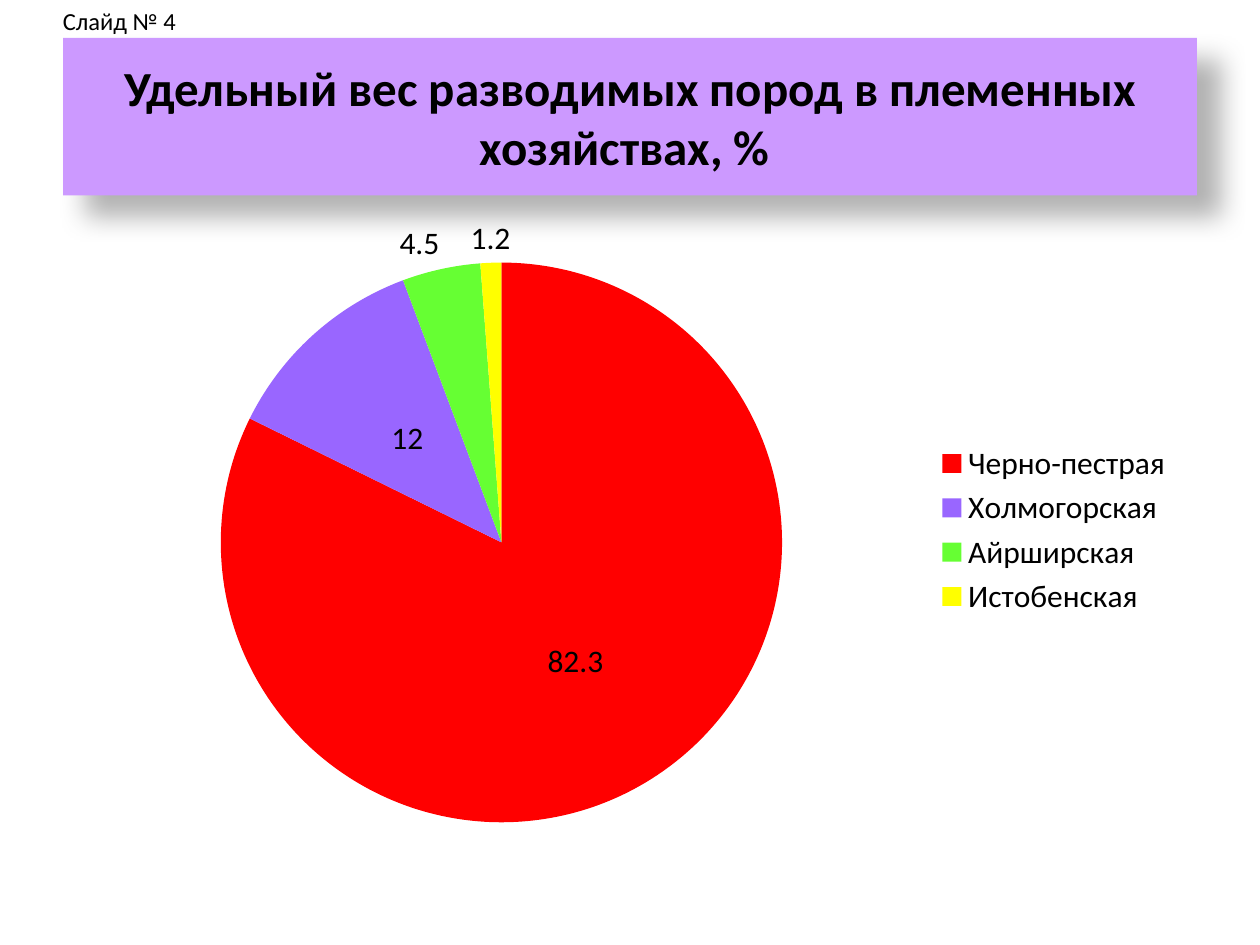
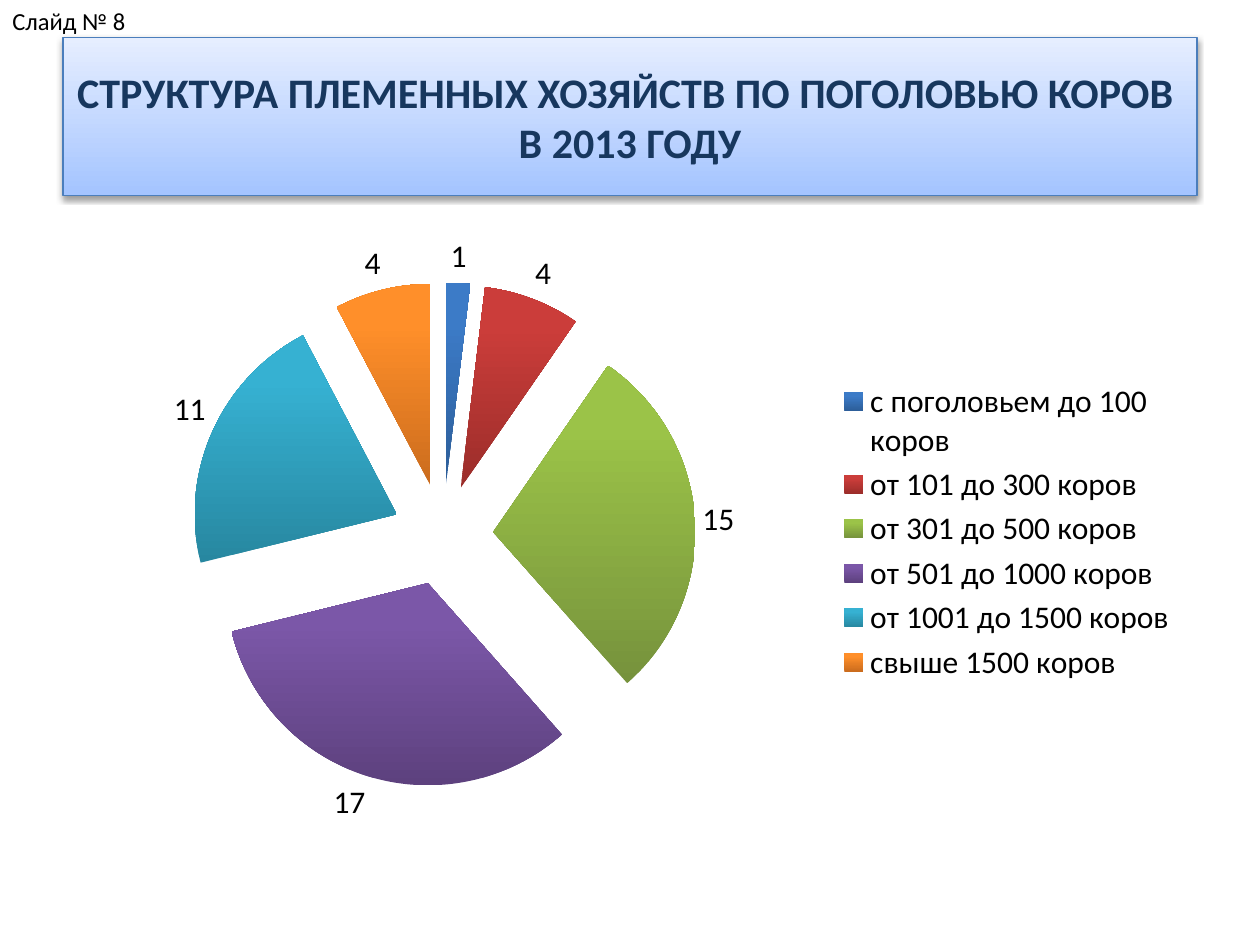
from pptx import Presentation
from pptx.chart.data import CategoryChartData
from pptx.dml.color import RGBColor
from pptx.enum.chart import XL_CHART_TYPE, XL_LABEL_POSITION, XL_LEGEND_POSITION
from pptx.enum.text import MSO_ANCHOR, MSO_AUTO_SIZE, PP_ALIGN
from pptx.oxml import parse_xml
from pptx.oxml.ns import nsdecls, qn
from pptx.util import Inches, Pt

FONT = "Calibri"
BLACK = RGBColor(0, 0, 0)
NAVY = RGBColor(0x17, 0x37, 0x5E)
SKY = RGBColor(0x8E, 0xB4, 0xE3)
EDGE = RGBColor(0x4B, 0x7E, 0xBC)
LILAC = RGBColor(0xCC, 0x99, 0xFF)
PALE = (RGBColor(0xA4, 0xC4, 0xFF), RGBColor(0xE6, 0xEE, 0xFF))
BREEDS = (
    ("Черно-пестрая ", 82.3, RGBColor(0xFF, 0, 0)),
    ("Холмогорская", 12, RGBColor(0x99, 0x66, 0xFF)),
    ("Айрширская", 4.5, RGBColor(0x66, 0xFF, 0x33)),
    ("Истобенская", 1.2, RGBColor(0xFF, 0xFF, 0)),
)
HERDS = (
    ("с поголовьем до 100 коров ", 1,
     (RGBColor(0x2C, 0x5D, 0x98), RGBColor(0x3C, 0x7B, 0xC7))),
    ("от 101 до 300 коров ", 4,
     (RGBColor(0x9B, 0x2D, 0x2A), RGBColor(0xCB, 0x3D, 0x3A))),
    ("от 301 до 500 коров ", 15,
     (RGBColor(0x76, 0x92, 0x3C), RGBColor(0x9B, 0xC3, 0x48))),
    ("от 501 до 1000 коров ", 17,
     (RGBColor(0x5D, 0x41, 0x7E), RGBColor(0x7B, 0x57, 0xA8))),
    ("от 1001 до 1500 коров ", 11,
     (RGBColor(0x27, 0x87, 0xA0), RGBColor(0x36, 0xB1, 0xD2))),
    ("свыше 1500 коров ", 4,
     (RGBColor(0xCB, 0x6C, 0x1D), RGBColor(0xFF, 0x8F, 0x2A))),
)


class Deck:
    def __init__(self):
        self.show = Presentation()
        self.show.slide_width = Inches(10)
        self.show.slide_height = Inches(7.5)
        self.slide = None

    def box(self, left, top, width, height):
        wide, high = self.show.slide_width, self.show.slide_height
        return (int(left * wide), int(top * high),
                int(width * wide), int(height * high))

    def start(self):
        self.slide = self.show.slides.add_slide(self.show.slide_layouts[5])

    def paint(self, fill, tint, end=1):
        if isinstance(tint, RGBColor):
            fill.solid()
            fill.fore_color.rgb = tint
            return
        fill.gradient()
        fill.gradient_angle = 90
        for stop, color, place in zip(fill.gradient_stops, tint, (0, end)):
            stop.color.rgb = color
            stop.position = place

    def style(self, font, size, color=BLACK, bold=False):
        font.name = FONT
        font.size = Pt(size)
        font.bold = bold
        font.color.rgb = color

    def shade(self, shape, alpha, blur, dist, angle):
        shape.shadow.inherit = False
        effect = next(shape.element.iter(qn("a:effectLst")))
        effect.append(parse_xml(
            f'<a:outerShdw {nsdecls("a")} blurRad="{Pt(blur)}" dist="{Pt(dist)}" '
            f'dir="{angle * 60000}" algn="tl" rotWithShape="0"><a:srgbClr val="000000">'
            f'<a:alpha val="{alpha * 1000}"/></a:srgbClr></a:outerShdw>'))

    def title(self, text, size, color, tint, shadow, edge=None, trim=None):
        band = self.slide.shapes.title
        band.left, band.top, band.width, band.height = self.box(0.05, 0.04, 0.9, 1 / 6)
        self.paint(band.fill, tint)
        if edge:
            band.line.color.rgb = edge
            band.line.width = Pt(0.75)
        else:
            band.line.fill.background()
        self.shade(band, *shadow)
        frame = band.text_frame
        frame.word_wrap = True
        frame.auto_size = MSO_AUTO_SIZE.NONE
        frame.vertical_anchor = MSO_ANCHOR.MIDDLE
        frame.text = text
        head = frame.paragraphs[0]
        head.alignment = PP_ALIGN.CENTER
        for run in head.runs:
            self.style(run.font, size, color, True)
        if trim:
            for props in band.element.iter(qn("a:rPr")):
                props.insert(0, parse_xml(
                    f'<a:ln {nsdecls("a")} w="{Pt(0.71)}"><a:solidFill>'
                    f'<a:srgbClr val="{trim}"/></a:solidFill></a:ln>'))

    def label(self, text, left):
        note = self.slide.shapes.add_textbox(*self.box(left, 0, 0.15, 0.045))
        frame = note.text_frame
        frame.word_wrap = True
        frame.auto_size = MSO_AUTO_SIZE.SHAPE_TO_FIT_TEXT
        frame.text = text
        self.style(frame.paragraphs[0].runs[0].font, 14)

    def pie(self, rows, area, plot):
        data = CategoryChartData()
        data.categories = [name for name, _, _ in rows]
        data.add_series("Series 1", [value for _, value, _ in rows])
        chart = self.slide.shapes.add_chart(
            XL_CHART_TYPE.PIE, *self.box(*area), data).chart
        self.style(chart.font, 18)
        chart.has_title = False
        chart.has_legend = True
        chart.legend.position = XL_LEGEND_POSITION.RIGHT
        chart.legend.include_in_layout = False
        chart.plots[0].vary_by_categories = True
        series = chart.plots[0].series[0]
        for index, (_, _, tint) in enumerate(rows):
            self.paint(series.points[index].format.fill, tint, 0.8)
        self.place(chart, plot)
        return chart, series

    def place(self, chart, plot):
        area = next(chart.element.iter(qn("c:plotArea")))
        for old in area.findall(qn("c:layout")):
            area.remove(old)
        sizes = "".join(f'<c:{key} val="{share}"/>' for key, share in zip("xywh", plot))
        area.insert(0, parse_xml(
            f'<c:layout {nsdecls("c")}><c:manualLayout><c:layoutTarget val="inner"/>'
            f'<c:xMode val="edge"/><c:yMode val="edge"/>{sizes}'
            f'</c:manualLayout></c:layout>'))

    def burst(self, chart, share):
        first = next(chart.element.iter(qn("c:dPt")))
        first.addprevious(parse_xml(f'<c:explosion {nsdecls("c")} val="{share}"/>'))


def breeds(deck):
    deck.start()
    deck.title("Удельный вес разводимых пород в племенных хозяйствах, % ",
               28, BLACK, LILAC, (30, 15, 18, 45))
    _, series = deck.pie(BREEDS, (0.047, 0.23, 0.9, 0.66), (0.14, 0.07, 0.5, 0.9))
    for index, (_, value, _) in enumerate(BREEDS):
        inside = value > 10
        series.points[index].data_label.position = (
            XL_LABEL_POSITION.CENTER if inside else XL_LABEL_POSITION.OUTSIDE_END)
    deck.label("Слайд № 4", 0.04)


def herds(deck):
    deck.start()
    deck.title("СТРУКТУРА ПЛЕМЕННЫХ ХОЗЯЙСТВ ПО ПОГОЛОВЬЮ КОРОВ \vВ 2013 ГОДУ",
               24, NAVY, PALE, (38, 3.1, 1.6, 90), EDGE, SKY)
    chart, series = deck.pie(HERDS, (0.05, 0.233, 0.9, 0.66), (0.11, 0.1, 0.45, 0.81))
    deck.burst(chart, 25)
    labels = series.data_labels
    labels.show_value = True
    labels.position = XL_LABEL_POSITION.OUTSIDE_END
    deck.style(labels.font, 18)
    deck.label("Слайд № 8", 0)


def main():
    deck = Deck()
    breeds(deck)
    herds(deck)
    deck.show.save("out.pptx")


if __name__ == "__main__":
    main()
